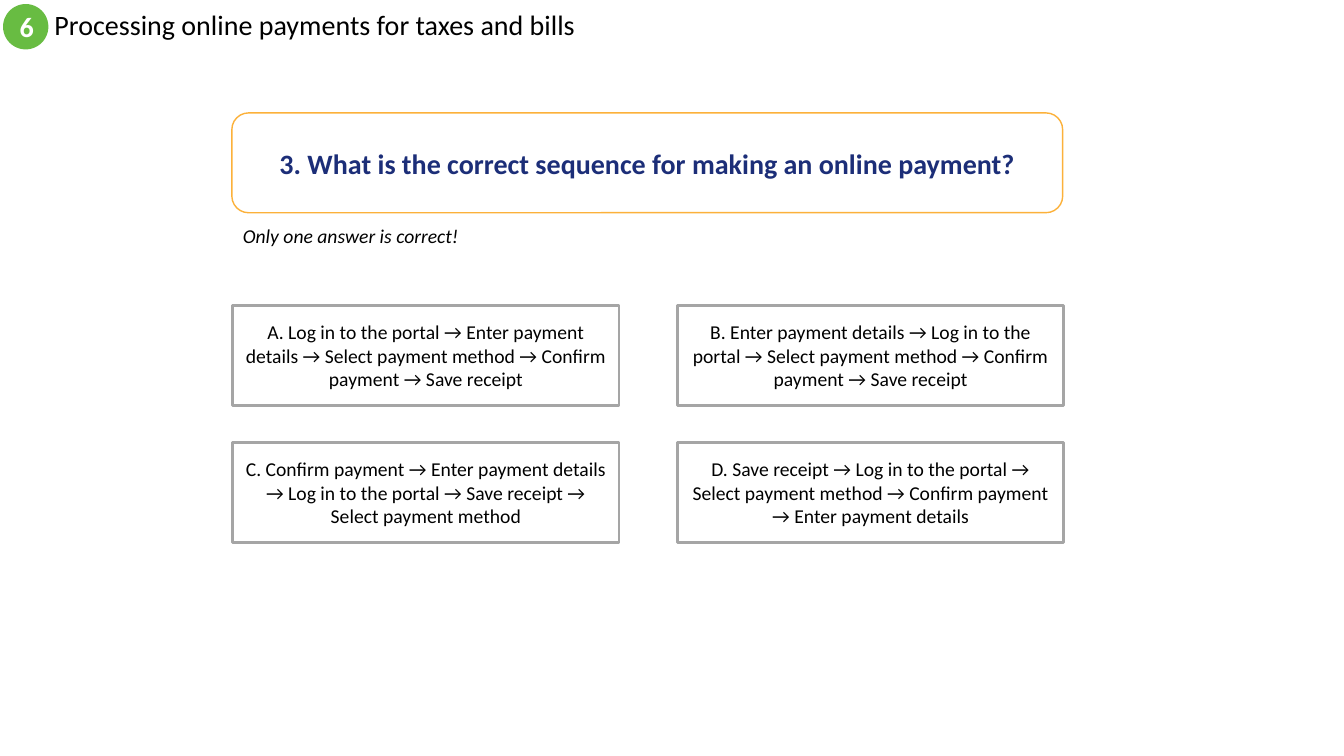
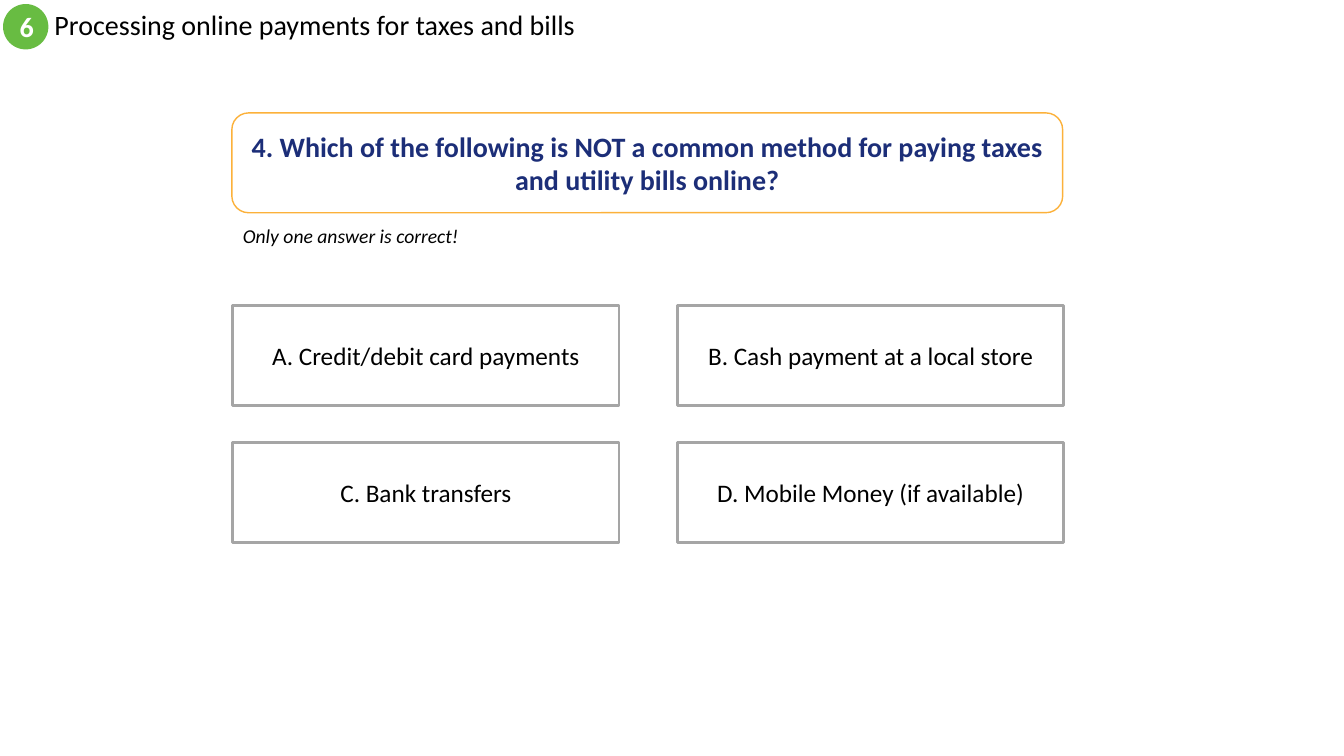
from pptx import Presentation
from pptx.dml.color import RGBColor
from pptx.enum.shapes import MSO_SHAPE
from pptx.enum.text import MSO_ANCHOR, MSO_AUTO_SIZE, PP_ALIGN
from pptx.util import Inches, Pt

COLORS = {
    "text": "000000",
    "paper": "FFFFFF",
    "badge": "68BC42",
    "question": "1C2E78",
    "question_line": "FCB13A",
    "answer_line": "A5A5A5",
}
FONT = "Calibri"
SECTION_NUMBER = "6"
SECTION_TITLE = "Processing online payments for taxes and bills"
HINT = "Only one answer is correct!"
LEFT, ANSWER_TOP = 2.31, 3.03
ANSWER_WIDTH, BOX_HEIGHT = 3.83, 0.99
COLUMN_GAP, ROW_GAP = 0.58, 0.37
COLUMNS = 2

QUIZ = [
    (
        "3. What is the correct sequence for making an online payment?",
        14,
        [
            "A. Log in to the portal → Enter payment details → Select payment method → Confirm payment → Save receipt",
            "B. Enter payment details → Log in to the portal → Select payment method → Confirm payment → Save receipt",
            "C. Confirm payment → Enter payment details → Log in to the portal → Save receipt → Select payment method",
            "D. Save receipt → Log in to the portal → Select payment method → Confirm payment → Enter payment details",
        ],
    ),
    (
        "4. Which of the following is NOT a common method for paying taxes and utility bills online?",
        18,
        [
            "A. Credit/debit card payments",
            "B. Cash payment at a local store",
            "C. Bank transfers",
            "D. Mobile Money (if available)",
        ],
    ),
]


class QuizDeck:
    """Quiz slides with one shared style and a current page."""

    def __init__(self):
        self.deck = Presentation()
        self.deck.slide_width = Inches(13.33)
        self.deck.slide_height = Inches(7.5)
        self.page = None

    def set_text(self, box, text, size, color="text", align=PP_ALIGN.CENTER,
                 anchor=MSO_ANCHOR.MIDDLE, bold=False, italic=False):
        frame = box.text_frame
        frame.text = text
        frame.word_wrap = True
        frame.auto_size = MSO_AUTO_SIZE.NONE
        frame.vertical_anchor = anchor
        para = frame.paragraphs[0]
        para.alignment = align
        font = para.runs[0].font
        font.name, font.size = FONT, Pt(size)
        font.bold, font.italic = bold, italic
        font.color.rgb = RGBColor.from_string(COLORS[color])
        return para

    def shape(self, kind, left, top, width, height, fill, line=None, weight=1):
        box = self.page.shapes.add_shape(
            kind, Inches(left), Inches(top), Inches(width), Inches(height))
        box.shadow.inherit = False
        box.fill.solid()
        box.fill.fore_color.rgb = RGBColor.from_string(COLORS[fill])
        if line:
            box.line.color.rgb = RGBColor.from_string(COLORS[line])
            box.line.width = Pt(weight)
        else:
            box.line.fill.background()
        return box

    def new_page(self):
        self.page = self.deck.slides.add_slide(self.deck.slide_layouts[5])
        title = self.page.shapes.title
        title.left, title.top = Inches(0.44), Inches(0.04)
        title.width, title.height = Inches(8), Inches(0.45)
        para = self.set_text(title, SECTION_TITLE, 20, align=PP_ALIGN.LEFT)
        para.line_spacing = 0.9
        badge = self.shape(MSO_SHAPE.OVAL, 0.03, 0.04, 0.45, 0.45, "badge")
        self.set_text(badge, SECTION_NUMBER, 20, "paper", bold=True)

    def question(self, text):
        width = COLUMNS * ANSWER_WIDTH + COLUMN_GAP
        box = self.shape(MSO_SHAPE.ROUNDED_RECTANGLE, 2.3, 1.12, width,
                         BOX_HEIGHT, "paper", "question_line")
        self.set_text(box, text, 20, "question", bold=True)

    def hint(self):
        box = self.page.shapes.add_textbox(
            Inches(LEFT), Inches(2.17), Inches(2.36), Inches(0.34))
        self.set_text(box, HINT, 14, align=PP_ALIGN.LEFT,
                      anchor=MSO_ANCHOR.TOP, italic=True)

    def answers(self, texts, size):
        for index, text in enumerate(texts):
            row, column = divmod(index, COLUMNS)
            box = self.shape(
                MSO_SHAPE.RECTANGLE,
                LEFT + column * (ANSWER_WIDTH + COLUMN_GAP),
                ANSWER_TOP + row * (BOX_HEIGHT + ROW_GAP),
                ANSWER_WIDTH, BOX_HEIGHT, "paper", "answer_line", 2)
            self.set_text(box, text, size)


def main():
    quiz = QuizDeck()
    for question, size, answers in QUIZ:
        quiz.new_page()
        quiz.question(question)
        quiz.hint()
        quiz.answers(answers, size)
    quiz.deck.save("out.pptx")


if __name__ == "__main__":
    main()
